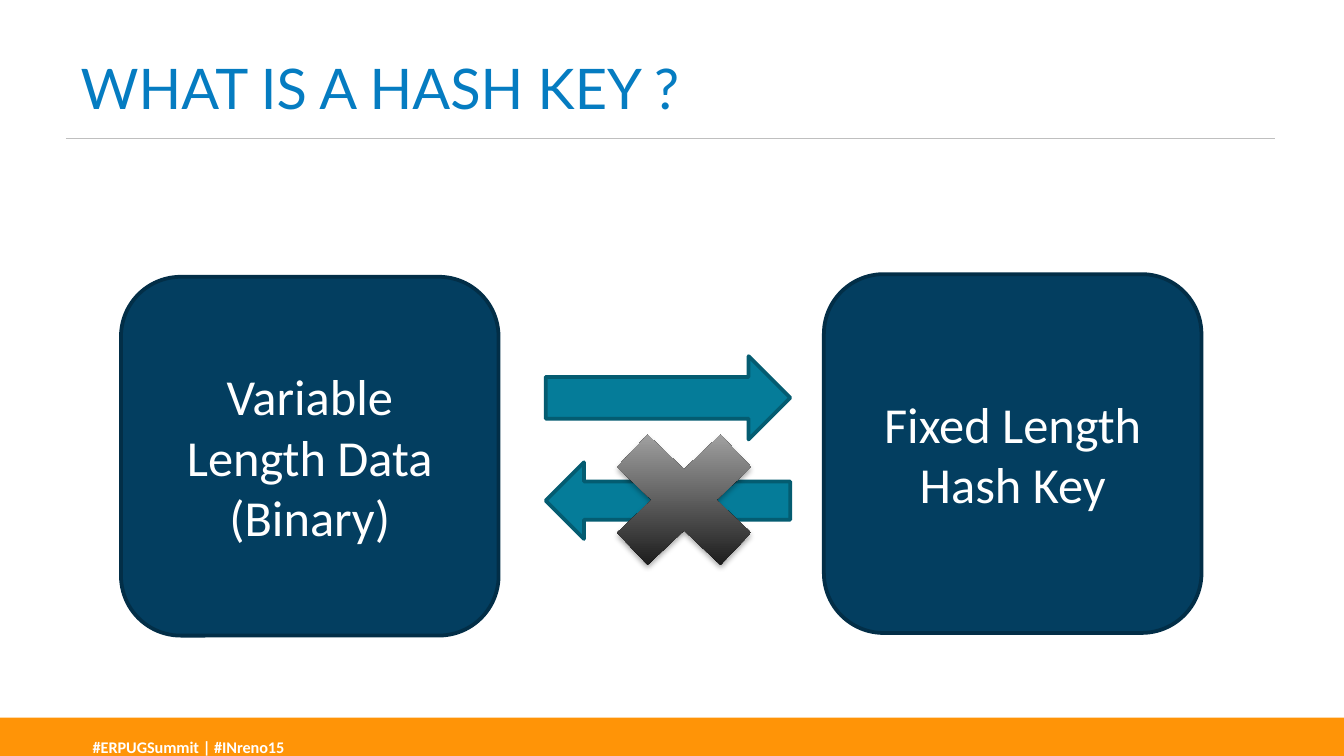
from lxml import etree
from pptx import Presentation
from pptx.dml.color import RGBColor
from pptx.enum.shapes import MSO_CONNECTOR, MSO_SHAPE
from pptx.enum.text import MSO_ANCHOR, MSO_AUTO_SIZE, PP_ALIGN
from pptx.oxml.ns import qn
from pptx.util import Inches, Pt

RECTANGLE, ROUNDED = MSO_SHAPE.RECTANGLE, MSO_SHAPE.ROUNDED_RECTANGLE
RIGHT_ARROW, LEFT_ARROW = MSO_SHAPE.RIGHT_ARROW, MSO_SHAPE.LEFT_ARROW
CROSS, STRAIGHT = MSO_SHAPE.MATH_MULTIPLY, MSO_CONNECTOR.STRAIGHT
MIDDLE, TOP = MSO_ANCHOR.MIDDLE, MSO_ANCHOR.TOP
LEFT, CENTER = PP_ALIGN.LEFT, PP_ALIGN.CENTER
NO_FIT = MSO_AUTO_SIZE.NONE

TITLE = "WHAT IS A HASH KEY ?"
FOOTER = "#ERPUGSummit | #INreno15"
BLOCKS = [
    ("Variable Length Data (Binary)", 0.9, 2.06),
    ("Fixed Length Hash Key", 6.13, 2.04),
]
ARROWS = [(RIGHT_ARROW, 2.65, 0.62), (LEFT_ARROW, 3.44, 0.57)]
CROSS_STOPS = [(0, "000000"), (1, "BDBDBD")]


def color(value):
    return RGBColor.from_string(value)


def write(shape, text, size, font="Calibri", hue="FFFFFF", bold=False,
          align=LEFT, anchor=MIDDLE):
    frame = shape.text_frame
    frame.word_wrap = True
    frame.auto_size = NO_FIT
    frame.vertical_anchor = anchor
    para = frame.paragraphs[0]
    para.alignment = align
    span = para.add_run()
    span.text = text
    span.font.size = Pt(size)
    span.font.name = font
    span.font.bold = bold
    span.font.color.rgb = color(hue)
    return span


def draw(page, kind, area, fill=None, line=None):
    shape = page.shapes.add_shape(kind, *map(Inches, area))
    shape.shadow.inherit = False
    if fill:
        shape.fill.solid()
        shape.fill.fore_color.rgb = color(fill)
    if line:
        shape.line.color.rgb = color(line)
        shape.line.width = Pt(2)
    else:
        shape.line.fill.background()
    return shape


def add_rule(page):
    rule = page.shapes.add_connector(
        STRAIGHT, Inches(0.49), Inches(1.03), Inches(9.49), Inches(1.03))
    rule.line.color.rgb = color("BFBFBF")
    rule.line.width = Pt(0.5)
    etree.SubElement(rule._element.spPr, qn("a:effectLst"))


def add_cross(page):
    cross = draw(page, CROSS, (4.35, 3.02, 1.48, 1.4))
    cross.fill.gradient()
    cross.fill.gradient_angle = 90
    for stop, (position, hue) in zip(cross.fill.gradient_stops, CROSS_STOPS):
        stop.position = position
        stop.color.rgb = color(hue)
    effects = cross._element.spPr.find(qn("a:effectLst"))
    shadow = etree.SubElement(
        effects, qn("a:outerShdw"), blurRad=str(Pt(3.1)), dist=str(Pt(1.8)),
        dir="5400000", rotWithShape="0")
    tint = etree.SubElement(shadow, qn("a:srgbClr"), val="000000")
    etree.SubElement(tint, qn("a:alpha"), val="35000")


def main():
    deck = Presentation()
    deck.slide_width = Inches(10)
    deck.slide_height = deck.slide_width * 9 // 16
    page = deck.slides.add_slide(deck.slide_layouts[5])

    draw(page, RECTANGLE, (0, 5.34, 10, 0.3), "FF9407")
    add_rule(page)

    footer = page.shapes.add_textbox(*map(Inches, (0.56, 5.41, 2.42, 0.27)))
    footer.text_frame.margin_left = Inches(0.13)
    span = write(footer, FOOTER, 15, bold=True, anchor=TOP)
    span.font._element.set("baseline", "30000")

    title = page.shapes.title
    title.left, title.top, title.width, title.height = map(
        Inches, (0.5, 0.18, 9, 0.94))
    write(title, TITLE, 30, font="Lato", hue="057CC1")

    for kind, top, height in ARROWS:
        draw(page, kind, (4.06, top, 1.82, height), "057C99", "045C71")
    add_cross(page)
    for text, left, top in BLOCKS:
        block = draw(page, ROUNDED, (left, top, 2.81, 2.67), "033E60", "022E47")
        write(block, text, 27, align=CENTER)

    deck.save("out.pptx")


if __name__ == "__main__":
    main()
